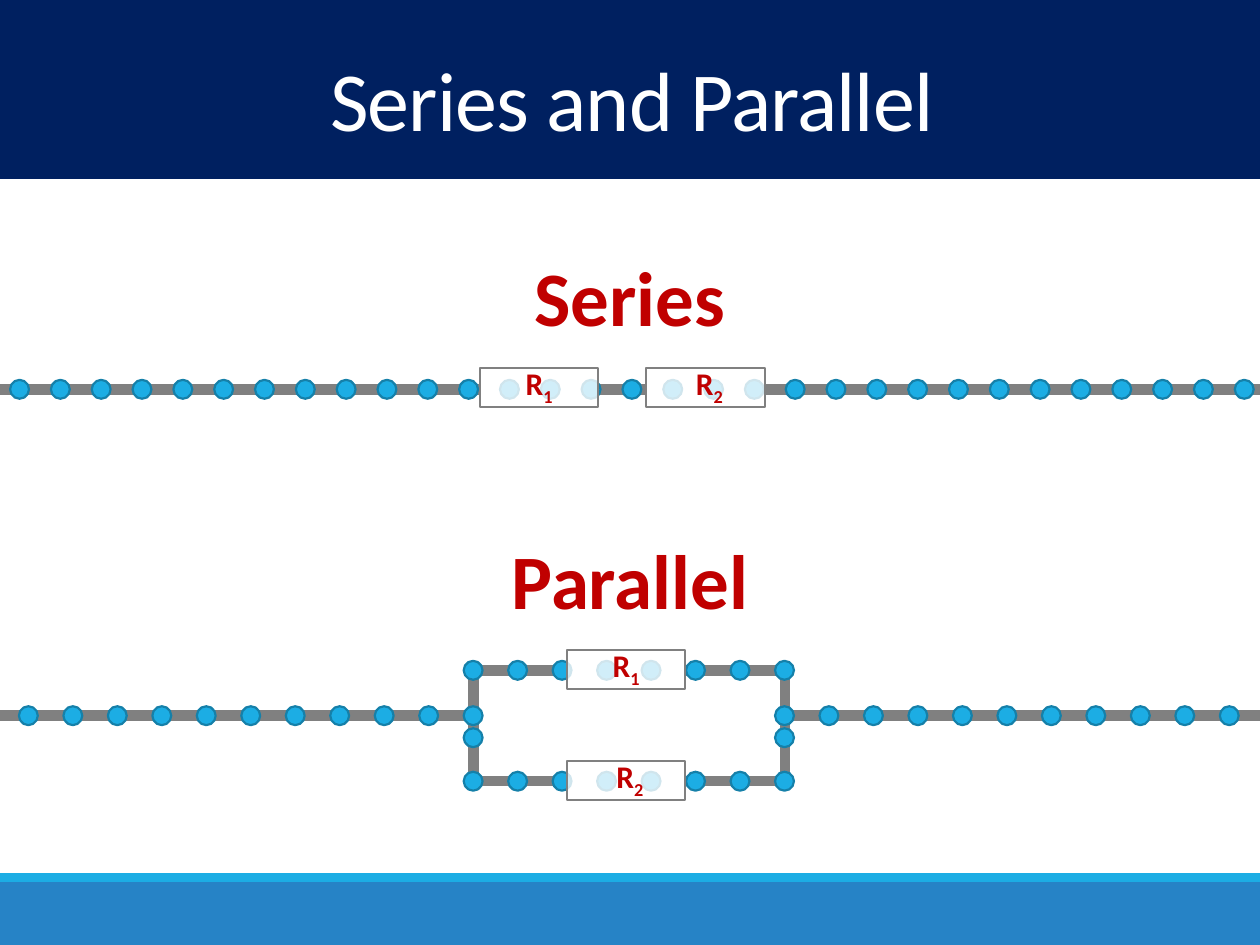
from dataclasses import dataclass

from lxml import etree
from pptx import Presentation
from pptx import util as u
from pptx.dml.color import RGBColor
from pptx.enum import shapes, text
from pptx.oxml import ns


@dataclass(frozen=True)
class Theme:
    font: str = "Calibri"
    navy: str = "002060"
    blue: str = "2683C6"
    cyan: str = "1CADE4"
    cyan_edge: str = "1580A9"
    gray: str = "808080"
    red: str = "C00000"
    white: str = "FFFFFF"
    title: int = 48
    heading: int = 44
    label: int = 18
    wire: float = 6
    outline: float = 1.25


THEME = Theme()
DOT = 0.15
RESISTOR = (0.94, 0.31)


def color(value):
    return RGBColor.from_string(value)


def add_block(page, kind, box, fill, line=None, width=0, opacity=None):
    shape = page.shapes.add_shape(kind, *map(u.Inches, box))
    shape.shadow.inherit = False
    shape.fill.solid()
    shape.fill.fore_color.rgb = color(fill)
    if opacity is not None:
        rgb = shape.fill._xPr.find(".//" + ns.qn("a:srgbClr"))
        etree.SubElement(rgb, ns.qn("a:alpha"), val=str(opacity * 1000))
    if line:
        shape.line.color.rgb = color(line)
        shape.line.width = u.Pt(width)
    else:
        shape.line.fill.background()
    return shape


def add_rect(page, box, fill, **style):
    return add_block(page, shapes.MSO_SHAPE.RECTANGLE, box, fill, **style)


def add_text(page, box, content, size, ink, bold=False, subscript=None):
    frame = page.shapes.add_textbox(*map(u.Inches, box)).text_frame
    frame.word_wrap = True
    frame.vertical_anchor = text.MSO_ANCHOR.MIDDLE
    para = frame.paragraphs[0]
    para.alignment = text.PP_ALIGN.CENTER
    for piece in filter(None, (content, subscript)):
        span = para.add_run()
        span.text = piece
        span.font.name = THEME.font
        span.font.size = u.Pt(size)
        span.font.bold = bold
        span.font.color.rgb = color(ink)
    if subscript:
        span.font._element.set("baseline", "-25000")
    return para


def add_wire(page, left, right, y):
    wire = page.shapes.add_connector(
        shapes.MSO_CONNECTOR.STRAIGHT, *map(u.Inches, (left, y, right, y)))
    wire.line.color.rgb = color(THEME.gray)
    wire.line.width = u.Pt(THEME.wire)
    etree.SubElement(wire._element.spPr, ns.qn("a:effectLst"))


def add_charges(page, xs, y):
    for x in xs:
        add_block(page, shapes.MSO_SHAPE.OVAL, (x, y, DOT, DOT), THEME.cyan,
                  line=THEME.cyan_edge, width=THEME.outline)


def add_gap(page, left, top):
    """Clear the wire where a resistor will sit."""
    add_rect(page, (left, top, *RESISTOR), THEME.white)


def add_resistor(page, left, top, number, shift=0):
    """Translucent body that lets the charges shine through, with its name."""
    add_rect(page, (left, top, *RESISTOR), THEME.white,
             line=THEME.gray, width=THEME.outline, opacity=80)
    add_text(page, (left + shift, top - 0.06, RESISTOR[0], 0.4), "R",
             THEME.label, THEME.red, bold=True, subscript=number)


def add_heading(page, box, content):
    left, top, width, _ = box
    add_text(page, (left, top, width, 0.84), content,
             THEME.heading, THEME.red, bold=True)


def header(page, box):
    left, top, width, height = box
    add_rect(page, box, THEME.navy)
    para = add_text(page, (left + 0.03, top + 0.42, width - 0.03, height - 0.58),
                    "Series and Parallel", THEME.title, THEME.white)
    para.line_spacing = 0.85
    para.runs[0].font._element.set("spc", "-50")


def footer(page, box):
    left, top, width, height = box
    stripe = 0.07
    add_rect(page, (left, top + stripe, width, height - stripe), THEME.blue)
    add_rect(page, (left, top, width, stripe), THEME.cyan)


def series_circuit(page, box):
    left, top, width, _ = box
    add_heading(page, box, "Series")

    # One wire with two resistors, one after the other
    wire_y = top + 1.16
    body_y = top + 0.99
    bodies = [(left + 3.81, "1", 0), (left + 5.13, "2", 0.03)]
    add_wire(page, left, left + width, wire_y)
    for x, _, _ in bodies:
        add_gap(page, x, body_y)
    add_charges(page, [left + 0.08 + 0.324 * i for i in range(31)],
                wire_y - DOT / 2)
    for x, number, shift in bodies:
        add_resistor(page, x, body_y, number, shift)


def parallel_circuit(page, box):
    left, top, width, _ = box
    add_heading(page, box, "Parallel")

    # Main wire and the loop that splits it
    wire_y = top + 1.51
    upper_y = top + 1.15
    lower_y = upper_y + 0.88
    body_x = left + 4.5
    branches = [(upper_y, "1", 0), (lower_y, "2", 0.03)]
    add_wire(page, left, left + width, wire_y)
    add_rect(page, (left + 3.76, upper_y, 2.47, lower_y - upper_y), THEME.white,
             line=THEME.gray, width=THEME.wire)
    for y, _, _ in branches:
        add_gap(page, body_x, y - 0.16)

    # Charges share one grid; columns 10 to 17 span the loop
    grid = [left + 0.15 + 0.353 * i for i in range(28)]
    sides = [grid[10], grid[17]]
    add_charges(page, grid[:11] + grid[17:], wire_y - DOT / 2)
    add_charges(page, sides, wire_y + 0.1)
    for y, _, _ in branches:
        add_charges(page, grid[10:18], y - DOT / 2)
    for y, number, shift in branches:
        add_resistor(page, body_x, y - 0.16, number, shift)


def main():
    deck = Presentation()
    deck.slide_width, deck.slide_height = u.Inches(10), u.Inches(7.5)
    page = deck.slides.add_slide(deck.slide_layouts[6])
    footer(page, (0, 6.93, 10, 0.57))
    header(page, (0, 0, 10, 1.42))
    series_circuit(page, (0, 1.93, 10, 1.3))
    parallel_circuit(page, (0, 4.17, 10, 2.19))
    deck.save("out.pptx")


if __name__ == "__main__":
    main()
